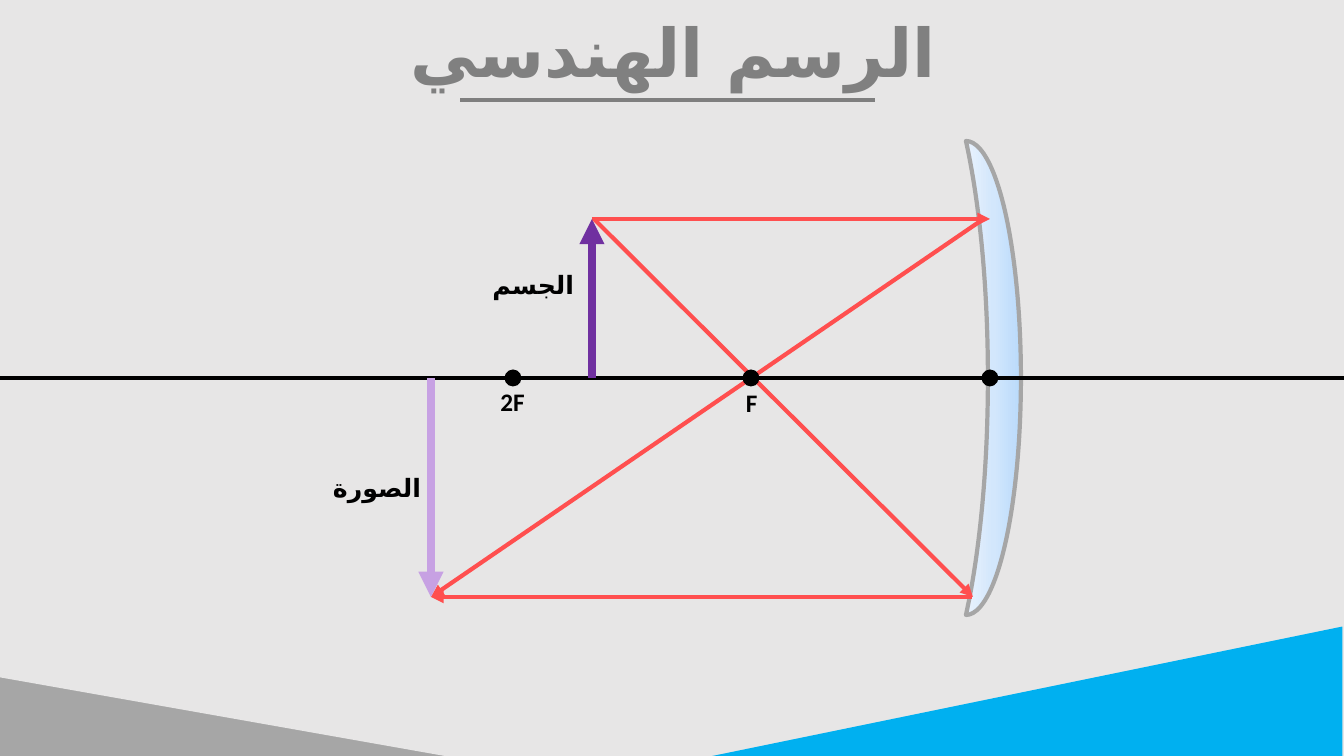
from copy import deepcopy
from pptx import Presentation
from pptx.dml.color import RGBColor
from pptx.enum.shapes import MSO_CONNECTOR as Link, MSO_SHAPE as Kind
from pptx.enum.text import MSO_ANCHOR as Anchor, MSO_AUTO_SIZE as Fit
from pptx.oxml.ns import qn
from pptx.oxml.xmlchemy import OxmlElement as Node
from pptx.util import Pt

PX = 914400 / 100.8
WIDE, HIGH, AXIS = 1344, 756, 378
RED, BLACK = "FF4F4F", "000000"
ARABIC = "DejaVu Sans"

TITLE = ("الرسم الهندسي", (398, 0, 551, 92))
LABELS = [
    ("الصورة", (303, 467, 128, 40), "r"),
    ("الجسم", (456, 264, 128, 40), "r"),
    ("F", (726, 382, 51, 40), "ctr"),
    ("2F", (487, 381, 51, 40), "ctr"),
]
LENS = (966, 141, 55, 474)
GLASS = [(0, "B9DAFB"), (0.5, "D3E7FC"), (1, "E9F2FD")]
POLE, FOCI = 990, (751, 513)
WEDGES = [((524, 87, 279, 1358), 270, False, "00B0F0", None),
          ((544, 107, 240, 1358), 90, True, "A6A6A6", ("E7E6E6", 12.25))]
BACK = [((982, 220), (431, 597), RED, 3, True),
        ((WIDE, AXIS), (0, AXIS), BLACK, 3, False),
        ((592, 219), (990, 219), RED, 3, True)]
FRONT = [((431, AXIS), (431, 597), "C7A1E3", 6, True),
         ((592, AXIS), (592, 219), "7030A0", 6, True),
         ((972, 597), (431, 597), RED, 3, True),
         ((594, 219), (973, 597), RED, 3, True),
         ((875, 100), (460, 100), "7F7F7F", 3.5, False)]


def px(*vals):
    return [round(v * PX) for v in vals]


def rgb(hue):
    return RGBColor.from_string(hue)


def write(box, text, size=18, font="Calibri", hue=BLACK, align="ctr", top=5):
    frame = box.text_frame
    frame.word_wrap = True
    frame.auto_size = Fit.NONE
    frame.vertical_anchor = Anchor.TOP
    frame.margin_top, = px(top)
    para = frame.paragraphs[0]
    props = para._p.get_or_add_pPr()
    props.set("algn", align)
    props.set("rtl", "1")
    run = para.add_run()
    run.text = text
    run.font.size, run.font.bold, run.font.name = Pt(size), True, font
    run.font.color.rgb = rgb(hue)
    script = Node("a:cs")
    script.set("typeface", ARABIC)
    run._r.rPr.append(script)


def shape(slide, kind, box, hue=None, edge=None, flip=False, turn=0):
    item = slide.shapes.add_shape(kind, *px(*box))
    item.shadow.inherit = False
    item.rotation = turn
    if hue:
        item.fill.solid()
        item.fill.fore_color.rgb = rgb(hue)
    if edge:
        item.line.color.rgb, item.line.width = rgb(edge[0]), Pt(edge[1])
    else:
        item.line.fill.background()
    if flip:
        item._element.spPr.xfrm.set("flipH", "1")
    return item


def dot(slide, x):
    shape(slide, Kind.OVAL, (x - 8.5, AXIS - 8.5, 17, 17), BLACK)


def line(slide, start, end, hue, width, arrow):
    item = slide.shapes.add_connector(Link.STRAIGHT, *px(*start, *end))
    item.line.color.rgb, item.line.width = rgb(hue), Pt(width)
    if arrow:
        tip = Node("a:tailEnd")
        tip.set("type", "triangle")
        item.line._get_or_add_ln().append(tip)
    item._element.spPr.append(Node("a:effectLst"))


def lens(slide):
    item = shape(slide, Kind.MOON, LENS, edge=("A6A6A6", 3), flip=True)
    item.adjustments[0] = 0.6
    item.fill.gradient()
    item.fill.gradient_angle = 0
    stops = item._element.spPr.find(".//" + qn("a:gsLst"))
    stops.insert(1, deepcopy(stops[0]))
    for stop, (place, hue) in zip(item.fill.gradient_stops, GLASS):
        stop.position, stop.color.rgb = place, rgb(hue)


def main():
    """Build the ray diagram slide of a concave mirror."""
    deck = Presentation()
    deck.slide_width, deck.slide_height = px(WIDE, HIGH)
    slide = deck.slides.add_slide(deck.slide_layouts[5])
    slide.background.fill.solid()
    slide.background.fill.fore_color.rgb = rgb("E7E6E6")

    text, box = TITLE
    title = slide.shapes.title
    title.left, title.top, title.width, title.height = px(*box)
    write(title, text, size=48, font="Karla", hue="808080", top=10)

    lens(slide)
    dot(slide, POLE)
    for ray in BACK:
        line(slide, *ray)
    for box, turn, flip, hue, edge in WEDGES:
        wedge = shape(slide, Kind.ISOSCELES_TRIANGLE, box, hue, edge, flip, turn)
        wedge.adjustments[0] = 0
    for ray in FRONT:
        line(slide, *ray)
    for x in FOCI:
        dot(slide, x)
    for text, box, align in LABELS:
        write(slide.shapes.add_textbox(*px(*box)), text, align=align)

    deck.save("out.pptx")


if __name__ == "__main__":
    main()
